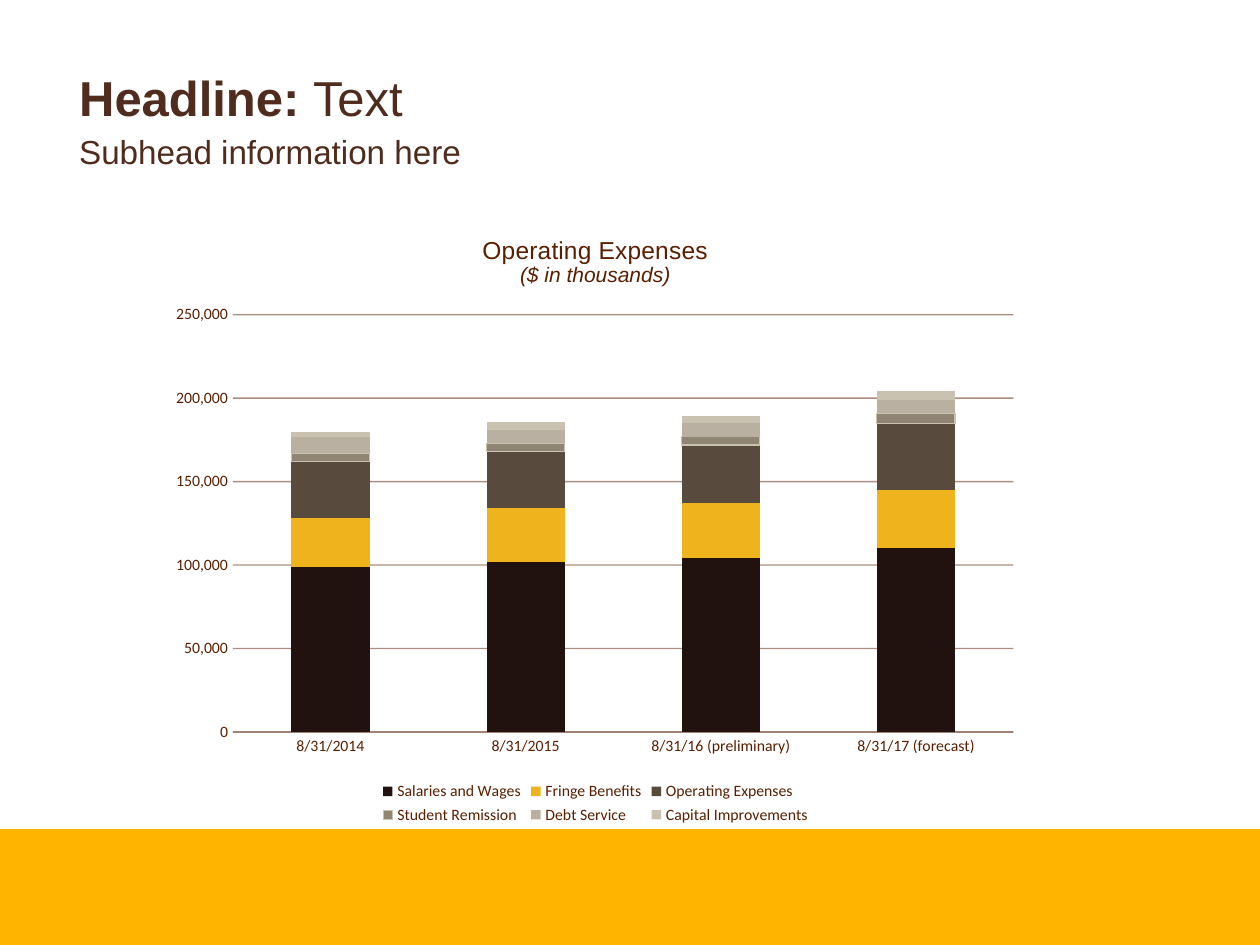
from lxml import etree
from pptx import Presentation
from pptx.chart.data import CategoryChartData
from pptx.dml.color import RGBColor
from pptx.enum.chart import XL_CHART_TYPE, XL_LEGEND_POSITION, XL_TICK_MARK
from pptx.enum.shapes import MSO_SHAPE
from pptx.enum.text import MSO_ANCHOR
from pptx.oxml.ns import qn
from pptx.util import Inches, Pt

STACKED = XL_CHART_TYPE.COLUMN_STACKED
BOTTOM = XL_LEGEND_POSITION.BOTTOM
NO_TICK = XL_TICK_MARK.NONE
RECT = MSO_SHAPE.RECTANGLE
MIDDLE, TOP = MSO_ANCHOR.MIDDLE, MSO_ANCHOR.TOP

WIDE, HIGH = 10, 7.5
GOLD, BROWN, RUST = "FFB500", "4F2C1D", "591F00"

DATES = ["8/31/2014", "8/31/2015", "8/31/16 (preliminary)", "8/31/17 (forecast)"]
COSTS = [
    ("Salaries and Wages", "21120F", (99000, 102000, 104000, 110000)),
    ("Fringe Benefits", "EFB31D", (29000, 32000, 33000, 35000)),
    ("Operating Expenses", "584B3D", (34000, 34000, 35000, 40000)),
    ("Student Remission", "908472", (5000, 5000, 5000, 6000)),
    ("Debt Service", "B9B0A1", (10000, 8000, 8000, 8000)),
    ("Capital Improvements", "CAC2B0", (3000, 5000, 4000, 5000)),
]


def paint(color, hue):
    """Set a color format from a hex string."""
    color.rgb = RGBColor.from_string(hue)


def style(font, name, size, hue):
    font.name, font.size = name, Pt(size)
    paint(font.color, hue)


def band(slide, top, hue):
    """Fill the full width from top to the foot of the slide."""
    bar = slide.shapes.add_shape(
        RECT, 0, Inches(top), Inches(WIDE), Inches(HIGH - top))
    bar.shadow.inherit = False
    bar.fill.solid()
    paint(bar.fill.fore_color, hue)
    bar.line.fill.background()


def text(slide, box, runs, size, anchor):
    """Add one line of (words, bold) runs."""
    frame = slide.shapes.add_textbox(*map(Inches, box)).text_frame
    frame.word_wrap = True
    frame.vertical_anchor = anchor
    para = frame.paragraphs[0]
    style(para.font, "Arial", size, BROWN)
    for words, bold in runs:
        run = para.add_run()
        run.text = words
        run.font.bold = bold


def rule(line):
    """Thin half-clear line."""
    line.width = Pt(0.75)
    line.fill.solid()
    paint(line.color, RUST)
    for hue in line._get_or_add_ln().iter(qn("a:srgbClr")):
        etree.SubElement(hue, qn("a:alpha"), val="50000")


def place(chart, **shares):
    """Fix the inner plot area as shares of the chart."""
    area = chart._chartSpace.chart.plotArea
    for old in area.findall(qn("c:layout")):
        area.remove(old)
    layout = etree.Element(qn("c:layout"))
    area.insert(0, layout)
    spot = etree.SubElement(layout, qn("c:manualLayout"))
    parts = {"layoutTarget": "inner", "xMode": "edge", "yMode": "edge", **shares}
    for tag, val in parts.items():
        etree.SubElement(spot, qn("c:" + tag), val=str(val))


def head(chart, lines):
    """Write the chart title from (words, size, italic) lines."""
    frame = chart.chart_title.text_frame
    for i, (words, size, slant) in enumerate(lines):
        para = frame.add_paragraph() if i else frame.paragraphs[0]
        style(para.font, "Arial", size, RUST)
        para.font.bold, para.font.italic = False, slant
        para.add_run().text = words
    chart.chart_title.include_in_layout = False


def graph(slide, box):
    data = CategoryChartData(number_format="#,##0")
    data.categories = DATES
    for name, _, vals in COSTS:
        data.add_series(name, vals)
    chart = slide.shapes.add_chart(STACKED, *map(Inches, box), data).chart
    style(chart.font, "Calibri", 10, "000000")
    head(chart, [("Operating Expenses", 14, False), ("($ in thousands)", 12, True)])
    place(chart, x=0.085, y=0.167, w=0.894, h=0.676)

    # Columns
    plot = chart.plots[0]
    plot.gap_width, plot.overlap = 150, 100
    plot.vary_by_categories = False
    for item, (name, hue, _) in zip(plot.series, COSTS):
        item.format.fill.solid()
        paint(item.format.fill.fore_color, hue)
        if name == "Student Remission":
            item.format.line.width = Pt(0.75)
            paint(item.format.line.color, "CAC2B0")

    # Axes
    dates, sums = chart.category_axis, chart.value_axis
    for axis in (dates, sums):
        axis.major_tick_mark = axis.minor_tick_mark = NO_TICK
        style(axis.tick_labels.font, "Calibri", 9, RUST)
    rule(dates.format.line)
    sums.format.line.fill.background()
    sums.has_major_gridlines = True
    rule(sums.major_gridlines.format.line)
    sums.minimum_scale, sums.maximum_scale, sums.major_unit = 0, 250000, 50000
    sums.tick_labels.number_format = "#,##0"
    sums.tick_labels.number_format_is_linked = False

    # Legend
    chart.has_legend = True
    chart.legend.position = BOTTOM
    chart.legend.include_in_layout = False
    style(chart.legend.font, "Calibri", 9, RUST)


def main():
    deck = Presentation()
    deck.slide_width, deck.slide_height = Inches(WIDE), Inches(HIGH)
    slide = deck.slides.add_slide(deck.slide_layouts[6])
    band(slide, 6.58, GOLD)
    text(slide, (0.53, 0.14, 7.42, 1.25),
         [("Headline: ", True), ("Text", False)], 28, MIDDLE)
    text(slide, (0.53, 0.99, 3.52, 0.42),
         [("Subhead information here", False)], 19, TOP)
    graph(slide, (1.26, 1.68, 6.93, 4.9))
    deck.save("out.pptx")


if __name__ == "__main__":
    main()
